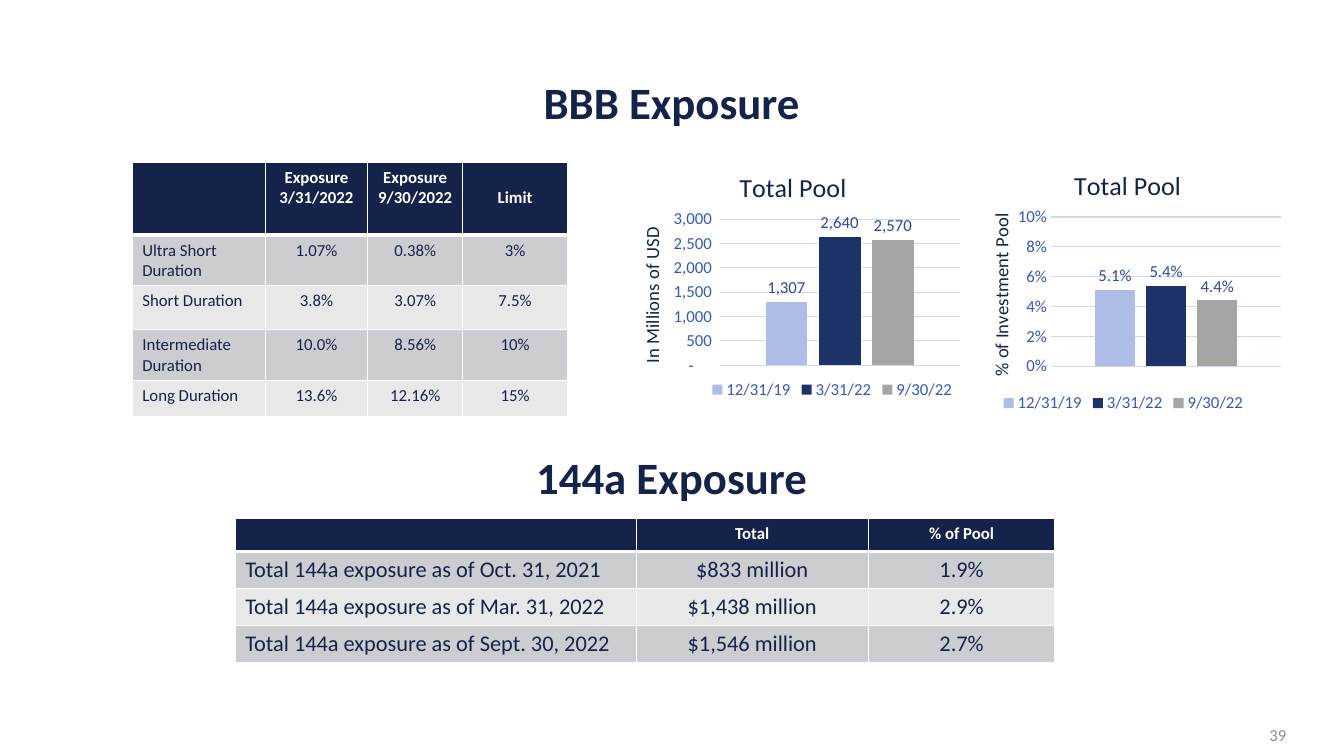
import lxml.etree
import pptx
import pptx.chart.data
import pptx.dml.color
import pptx.enum.chart
import pptx.enum.text
import pptx.oxml.ns
import pptx.util

Pt = pptx.util.Pt
RGBColor = pptx.dml.color.RGBColor
Align = pptx.enum.text.PP_ALIGN
Anchor = pptx.enum.text.MSO_ANCHOR
qn = pptx.oxml.ns.qn

NAVY = RGBColor(0x15, 0x23, 0x4A)
WHITE = RGBColor(0xFF, 0xFF, 0xFF)
BAND_DARK = RGBColor(0xCC, 0xCD, 0xD0)
BAND_LIGHT = RGBColor(0xE8, 0xE8, 0xE9)
PAGE_GRAY = RGBColor(0x8C, 0x8D, 0x96)
AXIS_BLUE = RGBColor(0x35, 0x59, 0xBB)
LABEL_BLUE = RGBColor(0x2C, 0x49, 0x9B)
GRID_BLUE = RGBColor(0xCF, 0xD8, 0xF1)
BAR_COLORS = (RGBColor(0xAE, 0xBD, 0xE8), RGBColor(0x1E, 0x32, 0x6A), RGBColor(0xA5, 0xA5, 0xA5))
DATES = ("12/31/19", "3/31/22", "9/30/22")
THOUSANDS = '_(* #,##0_);_(* \\(#,##0\\);_(* "-"??_);_('


class ExposureSlide:
    """Holds the type style and the current slide."""

    def __init__(self, page):
        self.page = page
        self.font_name = "Calibri"

    def format_font(self, font, size, color, bold=False):
        for name, value in {"name": self.font_name, "size": Pt(size), "bold": bold}.items():
            setattr(font, name, value)
        font.color.rgb = color

    def add_lines(self, frame, text, size, color, bold=False, align=Align.LEFT, spacing=None):
        for index, line in enumerate(text.split("\n")):
            para = frame.add_paragraph() if index else frame.paragraphs[0]
            para.alignment = align
            para.line_spacing = spacing
            if line:
                span = para.add_run()
                span.text = line
                self.format_font(span.font, size, color, bold)
            else:
                lxml.etree.SubElement(para._p, qn("a:endParaRPr"), sz=str(size * 100))

    def text(self, box, place, text, **style):
        box.left, box.top, box.width, box.height = map(Pt, place)
        frame = box.text_frame
        frame.word_wrap = True
        frame.vertical_anchor = Anchor.MIDDLE
        self.add_lines(frame, text, **style)

    def text_box(self, place, text, **style):
        self.text(self.page.shapes.add_textbox(0, 0, 0, 0), place, text, **style)

    def border(self, cell, row):
        properties = cell._tc.get_or_add_tcPr()
        thick = {0: "lnB", 1: "lnT"}.get(row)
        for side in ("lnL", "lnR", "lnT", "lnB"):
            line = lxml.etree.SubElement(properties, qn("a:" + side), w=str(Pt(3 if side == thick else 1)))
            fill = lxml.etree.SubElement(line, qn("a:solidFill"))
            lxml.etree.SubElement(fill, qn("a:srgbClr"), val=str(WHITE))

    def table(self, left, top, widths, heights, rows, body_size):
        frame = self.page.shapes.add_table(
            len(rows), len(widths), Pt(left), Pt(top), Pt(sum(widths)), Pt(sum(heights)))
        table = frame.table
        for column, width in zip(table.columns, widths):
            column.width = Pt(width)
        for row, (height, texts) in enumerate(zip(heights, rows)):
            table.rows[row].height = Pt(height)
            for column, text in enumerate(texts):
                cell = table.cell(row, column)
                self.border(cell, row)
                cell.fill.solid()
                cell.fill.fore_color.rgb = (BAND_DARK if row % 2 else BAND_LIGHT) if row else NAVY
                self.add_lines(cell.text_frame, text, body_size if row else 12,
                               NAVY if row else WHITE, bold=not row,
                               align=Align.CENTER if column else Align.LEFT)
        return table

    def set_layout(self, element, index, **fractions):
        """Put a chart part at fractions of the chart's size."""
        old = element.find(qn("c:layout"))
        if old is not None:
            element.remove(old)
        layout = lxml.etree.Element(qn("c:layout"))
        element.insert(index, layout)
        manual = lxml.etree.SubElement(layout, qn("c:manualLayout"))
        values = {"xMode": "edge", "yMode": "edge", **fractions}
        if "w" in fractions:
            values = {"layoutTarget": "inner", **values}
        for name, value in values.items():
            lxml.etree.SubElement(manual, qn("c:" + name), val=str(value))

    def chart(self, place, values, axis_title, axis_format, label_format, maximum, unit,
              plot_layout, title_layout, axis_title_layout, legend_layout=None):
        data = pptx.chart.data.CategoryChartData()
        data.categories = ["1"]
        for date, value in zip(DATES, values):
            data.add_series(date, [value])
        chart = self.page.shapes.add_chart(
            pptx.enum.chart.XL_CHART_TYPE.COLUMN_CLUSTERED, *map(Pt, place), data).chart
        self.format_font(chart.font, 10, NAVY)

        # Titles
        chart.has_title = True
        self.add_lines(chart.chart_title.text_frame, "Total Pool", 18.6, NAVY, align=Align.CENTER)
        self.set_layout(chart.chart_title._element, 1, **title_layout)
        axis = chart.value_axis
        axis.has_title = True
        frame = axis.axis_title.text_frame
        self.add_lines(frame, axis_title, 13.3, NAVY, align=Align.CENTER)
        for name, value in {"rot": "-5400000", "vert": "horz"}.items():
            frame._txBody.bodyPr.set(name, value)
        self.set_layout(axis.axis_title._element, 1, **axis_title_layout)

        # Axes
        chart.category_axis.visible = False
        settings = {"minimum_scale": 0, "maximum_scale": maximum, "major_unit": unit,
                    "has_major_gridlines": True,
                    "major_tick_mark": pptx.enum.chart.XL_TICK_MARK.NONE}
        for name, value in settings.items():
            setattr(axis, name, value)
        axis.format.line.fill.background()
        grid = axis.major_gridlines.format.line
        grid.width = Pt(0.75)
        grid.color.rgb = GRID_BLUE
        axis.tick_labels.number_format = axis_format
        axis.tick_labels.number_format_is_linked = False
        self.format_font(axis.tick_labels.font, 12, AXIS_BLUE)

        # Columns and their labels
        plot = chart.plots[0]
        for name, value in {"gap_width": 219, "overlap": -27, "vary_by_categories": False}.items():
            setattr(plot, name, value)
        for series, color in zip(plot.series, BAR_COLORS):
            series.format.fill.solid()
            series.format.fill.fore_color.rgb = color
            labels = series.data_labels
            label_settings = {"show_value": True, "number_format": label_format,
                              "number_format_is_linked": False,
                              "position": pptx.enum.chart.XL_LABEL_POSITION.OUTSIDE_END}
            for name, value in label_settings.items():
                setattr(labels, name, value)
            self.format_font(labels.font, 12, LABEL_BLUE)
        self.set_layout(chart._chartSpace.chart.plotArea, 0, **plot_layout)

        # Legend
        chart.has_legend = True
        chart.legend.position = pptx.enum.chart.XL_LEGEND_POSITION.BOTTOM
        chart.legend.include_in_layout = False
        self.format_font(chart.legend.font, 12, AXIS_BLUE)
        if legend_layout:
            self.set_layout(chart.legend._element, 1, **legend_layout)


def main():
    deck = pptx.Presentation()
    deck.slide_width, deck.slide_height = Pt(960), Pt(540)
    slide = ExposureSlide(deck.slides.add_slide(deck.slide_layouts[5]))

    # Headings and page number
    heading = {"size": 32, "color": NAVY, "bold": True, "align": Align.CENTER, "spacing": 0.9}
    slide.text(slide.page.shapes.title, (292.3, 48.2, 375, 54), "BBB Exposure", **heading)
    slide.text_box((292.3, 316, 375, 54), "144a Exposure", **heading)
    slide.text_box((710, 510.5, 216, 28.8), "39", size=12, color=PAGE_GRAY, align=Align.RIGHT)

    # BBB exposure by duration
    duration_table = slide.table(94.5, 116, (95, 73.2, 67.8, 75), (52, 36, 31.6, 36, 26), [
        ("", "Exposure\n3/31/2022", "Exposure\n9/30/2022", "Limit"),
        ("Ultra Short Duration", "1.07%", "0.38%", "3%"),
        ("Short Duration", "3.8%", "3.07%", "7.5%"),
        ("Intermediate Duration", "10.0%", "8.56%", "10%"),
        ("Long Duration", "13.6%", "12.16%", "15%"),
    ], body_size=12)
    duration_table.cell(0, 3).margin_top = Pt(18.2)

    # Total pool charts
    slide.chart((436.3, 103.7, 254.2, 193.7), (1307, 2640, 2570), "In Millions of USD",
                THOUSANDS, THOUSANDS, 3000, 500,
                plot_layout={"x": 0.306, "y": 0.273, "w": 0.674, "h": 0.539},
                title_layout={"x": 0.348, "y": 0.07},
                axis_title_layout={"x": 0.07, "y": 0.29},
                legend_layout={"x": 0.27, "y": 0.85})
    slide.chart((684.7, 102.2, 235.4, 195.8), (0.051, 0.054, 0.044), "% of Investment Pool",
                "0%", "0.0%", 0.1, 0.02,
                plot_layout={"x": 0.28, "y": 0.27, "w": 0.7, "h": 0.544},
                title_layout={"x": 0.336, "y": 0.07},
                axis_title_layout={"x": 0.08, "y": 0.245})

    # 144a exposure by date
    slide.table(168, 370, (286.5, 165.6, 133.5), (24, 26.4, 26.4, 26.4), [
        ("", "Total", "% of Pool"),
        ("Total 144a exposure as of Oct. 31, 2021", "$833 million", "1.9%"),
        ("Total 144a exposure as of Mar. 31, 2022", "$1,438 million", "2.9%"),
        ("Total 144a exposure as of Sept. 30, 2022", "$1,546 million", "2.7%"),
    ], body_size=16)

    deck.save("out.pptx")


if __name__ == "__main__":
    main()
